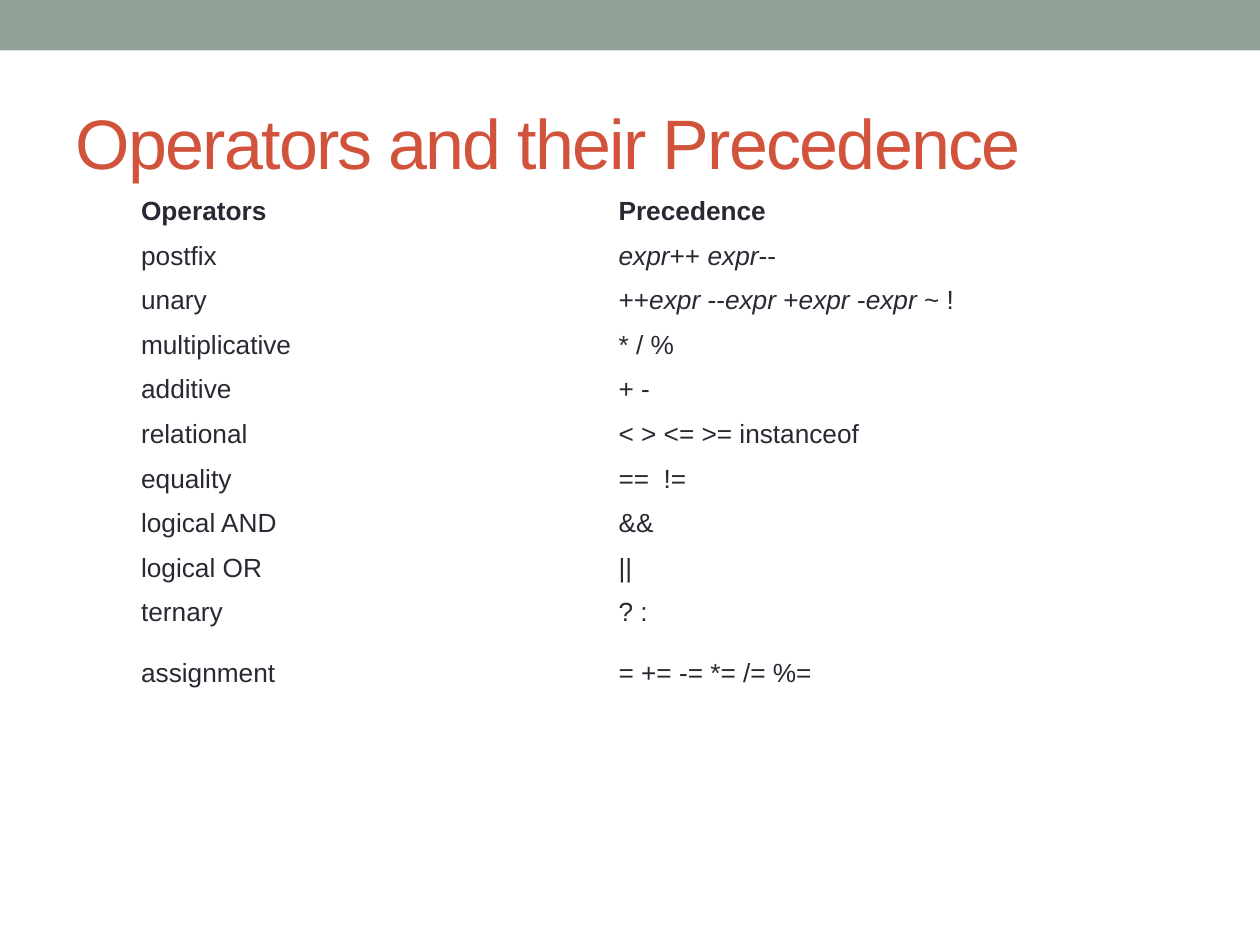
from pptx import Presentation
from pptx.dml.color import RGBColor
from pptx.enum.shapes import MSO_SHAPE as Shape
from pptx.enum.text import MSO_ANCHOR as Anchor, PP_ALIGN as Align
from pptx.util import Inches, Pt

COLORS = {"band": "93A299", "title": "D2533C", "text": "292934"}
FONT = "Arial"
VARIABLE = "expr"  # set in italics wherever it occurs

ROWS = [
    ("Operators", "Precedence"),
    ("postfix", "expr++ expr--"),
    ("unary", "++expr --expr +expr -expr ~ !"),
    ("multiplicative", "* / %"),
    ("additive", "+ -"),
    ("relational", "< > <= >= instanceof"),
    ("equality", "==  !="),
    ("logical AND", "&&"),
    ("logical OR", "||"),
    ("ternary", "? :"),
    ("assignment", "= += -= *= /= %="),
]


def add_span(para, text, size=15, color="text", bold=False, italic=False, spacing=None):
    span = para.add_run()
    span.text = text
    font = span.font
    font.name, font.size = FONT, Pt(size)
    font.bold, font.italic = bold, italic
    font.color.rgb = RGBColor.from_string(COLORS[color])
    if spacing is not None:
        span._r.get_or_add_rPr().set("spc", str(spacing * 100))


def add_expression(para, text, **style):
    """Write text with each operand variable in italics."""
    for index, part in enumerate(text.split(VARIABLE)):
        if index:
            add_span(para, VARIABLE, italic=True, **style)
        if part:
            add_span(para, part, **style)


def add_band(page, left, top, width, height):
    band = page.shapes.add_shape(Shape.RECTANGLE, left, top, width, height)
    band.shadow.inherit = False
    band.fill.solid()
    band.fill.fore_color.rgb = RGBColor.from_string(COLORS["band"])
    band.line.fill.background()


def place_title(page, text, left, top, width, height):
    title = page.shapes.title
    title.left, title.top, title.width, title.height = left, top, width, height
    frame = title.text_frame
    frame.word_wrap = True
    frame.vertical_anchor = Anchor.MIDDLE
    para = frame.paragraphs[0]
    para.alignment = Align.LEFT
    add_span(para, text, size=40, color="title", spacing=-1)


def add_precedence_table(page, left, top, width, height):
    table = page.shapes.add_table(len(ROWS), 2, left, top, width, height).table
    table.first_row = table.horz_banding = False
    last_height = Inches(0.61)
    for row in table.rows:
        row.height = (height - last_height) // (len(ROWS) - 1)
    table.rows[len(ROWS) - 1].height = last_height

    for row_index, texts in enumerate(ROWS):
        for column_index, text in enumerate(texts):
            cell = table.cell(row_index, column_index)
            cell.fill.background()
            cell.vertical_anchor = Anchor.MIDDLE
            cell.margin_left = cell.margin_right = Inches(0.04)
            cell.margin_top = cell.margin_bottom = Inches(0.04)
            add_expression(cell.text_frame.paragraphs[0], text, bold=row_index == 0)


def main():
    deck = Presentation()
    deck.slide_width, deck.slide_height = Inches(10), Inches(7.5)
    page = deck.slides.add_slide(deck.slide_layouts[5])
    add_band(page, 0, 0, deck.slide_width, Inches(0.4))
    place_title(page, "Operators and their Precedence",
                Inches(0.5), Inches(0.58), Inches(9), Inches(1.08))
    add_precedence_table(page, Inches(1.08), Inches(1.5), Inches(7.58), Inches(4.15))
    deck.save("out.pptx")


if __name__ == "__main__":
    main()
